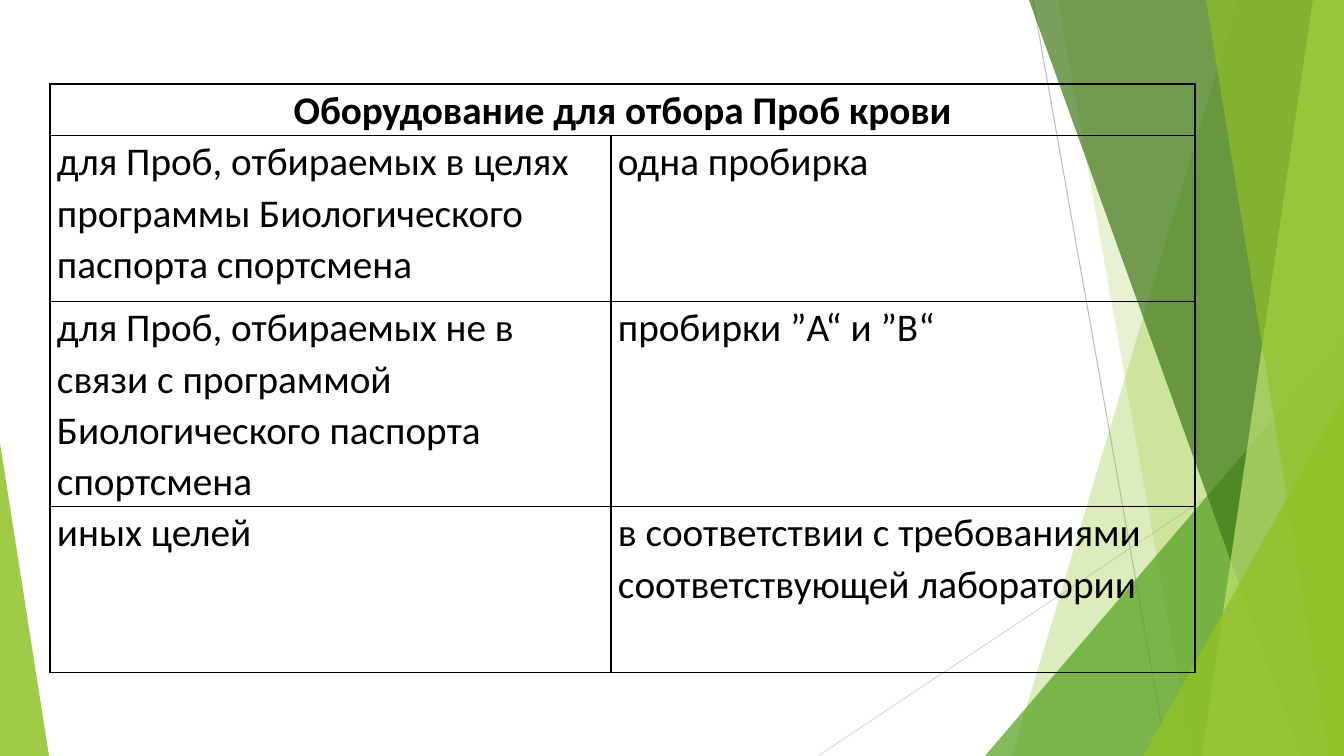
import lxml.etree
import pptx
import pptx.dml.color
import pptx.enum.shapes
import pptx.enum.text
import pptx.oxml
import pptx.oxml.ns
import pptx.util

RGBColor = pptx.dml.color.RGBColor
BLACK = RGBColor(0x00, 0x00, 0x00)
GREY = RGBColor(0xBF, 0xBF, 0xBF)
PALE_GREY = RGBColor(0xD9, 0xD9, 0xD9)
GREEN = RGBColor(0x90, 0xC2, 0x26)
MID_GREEN = RGBColor(0x54, 0xA0, 0x21)
DARK_GREEN = RGBColor(0x3F, 0x78, 0x19)
LIGHT_GREEN = RGBColor(0xC0, 0xE4, 0x74)

SLIDE_WIDTH, SLIDE_HEIGHT = 1344, 756
EMU_PER_PX = 914400 / 100.8

HEADING = "Оборудование для отбора Проб крови"
EQUIPMENT = [
    ("для Проб, отбираемых в целях программы Биологического паспорта спортсмена",
     "одна пробирка"),
    ("для Проб, отбираемых не в связи с программой Биологического паспорта спортсмена",
     "пробирки ˮА“ и ˮВ“"),
    ("иных целей",
     "в соответствии с требованиями соответствующей лаборатории"),
]


def px(length):
    return pptx.util.Emu(round(length * EMU_PER_PX))


class SlideBuilder:
    font_name = "Calibri"
    font_size = pptx.util.Pt(28)
    line_spacing = 1.07
    cell_inset = 7

    def __init__(self, slide):
        self.slide = slide

    def line(self, start, end, color):
        ray = self.slide.shapes.add_connector(
            pptx.enum.shapes.MSO_CONNECTOR.STRAIGHT, *map(px, start + end))
        ray.line.color.rgb = color
        ray.line.width = pptx.util.Pt(0.75)
        lxml.etree.SubElement(ray._element.spPr, pptx.oxml.ns.qn("a:effectLst"))

    def paint(self, facet, color, opacity):
        facet.shadow.inherit = False
        facet.line.fill.background()
        facet.fill.solid()
        facet.fill.fore_color.rgb = color
        tint = facet._element.spPr.find(".//" + pptx.oxml.ns.qn("a:srgbClr"))
        alpha = lxml.etree.SubElement(tint, pptx.oxml.ns.qn("a:alpha"))
        alpha.set("val", str(opacity * 1000))

    def band(self, top_x, bottom_x, color, opacity):
        outline = self.slide.shapes.build_freeform(top_x, 0, scale=EMU_PER_PX)
        outline.add_line_segments([
            (SLIDE_WIDTH, 0), (SLIDE_WIDTH, SLIDE_HEIGHT), (bottom_x, SLIDE_HEIGHT)])
        self.paint(outline.convert_to_shape(), color, opacity)

    def corner(self, left, top, width, apex, color, opacity):
        facet = self.slide.shapes.add_shape(
            pptx.enum.shapes.MSO_SHAPE.ISOSCELES_TRIANGLE,
            px(left), px(top), px(width), px(SLIDE_HEIGHT - top))
        facet.adjustments[0] = apex
        self.paint(facet, color, opacity)

    def border(self, cell):
        properties = cell._tc.get_or_add_tcPr()
        for position, side in enumerate(("lnL", "lnR", "lnT", "lnB")):
            properties.insert(position, pptx.oxml.parse_xml(
                f'<a:{side} {pptx.oxml.ns.nsdecls("a")} w="12700"><a:solidFill>'
                f'<a:srgbClr val="{BLACK}"/></a:solidFill></a:{side}>'))

    def cell_text(self, cell, text, heading=False):
        cell.margin_left = cell.margin_right = px(self.cell_inset)
        cell.margin_top = cell.margin_bottom = 0
        cell.text = text
        paragraph = cell.text_frame.paragraphs[0]
        paragraph.line_spacing = self.line_spacing
        align = pptx.enum.text.PP_ALIGN
        paragraph.alignment = align.CENTER if heading else align.LEFT
        paragraph.font.name = self.font_name
        paragraph.font.size = self.font_size
        paragraph.font.bold = heading
        paragraph.font.color.rgb = BLACK

    def table(self, left, top, widths, heights, heading, rows):
        grid = self.slide.shapes.add_table(
            len(heights), len(widths), px(left), px(top),
            px(sum(widths)), px(sum(heights))).table
        grid.first_row = grid.horz_banding = False
        for column, width in zip(grid.columns, widths):
            column.width = px(width)
        for row, height in zip(grid.rows, heights):
            row.height = px(height)
        for cell in grid.iter_cells():
            cell.fill.background()
            self.border(cell)
        grid.cell(0, 0).merge(grid.cell(0, len(widths) - 1))
        self.cell_text(grid.cell(0, 0), heading, heading=True)
        for row_number, texts in enumerate(rows, start=1):
            for column_number, text in enumerate(texts):
                self.cell_text(grid.cell(row_number, column_number), text)


def main():
    deck = pptx.Presentation()
    deck.slide_width, deck.slide_height = px(SLIDE_WIDTH), px(SLIDE_HEIGHT)
    builder = SlideBuilder(deck.slides.add_slide(deck.slide_layouts[6]))

    builder.line((1033, 0), (1167, SLIDE_HEIGHT), GREY)
    builder.line((SLIDE_WIDTH, 406), (818, SLIDE_HEIGHT), PALE_GREY)
    builder.band(1238, 1012, GREEN, 30)
    builder.band(1058, 1192, GREEN, 20)
    builder.corner(985, 336, 359, 1, MID_GREEN, 72)
    builder.band(1029, 1301, DARK_GREEN, 70)
    builder.band(1313, 1202, LIGHT_GREEN, 70)
    builder.band(1206, 1329, GREEN, 65)
    builder.corner(1143, 396, 201, 1, GREEN, 80)
    builder.corner(0, 443, 49, 0, GREEN, 85)

    builder.table(50, 84, [561, 584], [44, 166, 166, 166], HEADING, EQUIPMENT)
    deck.save("out.pptx")


if __name__ == "__main__":
    main()
